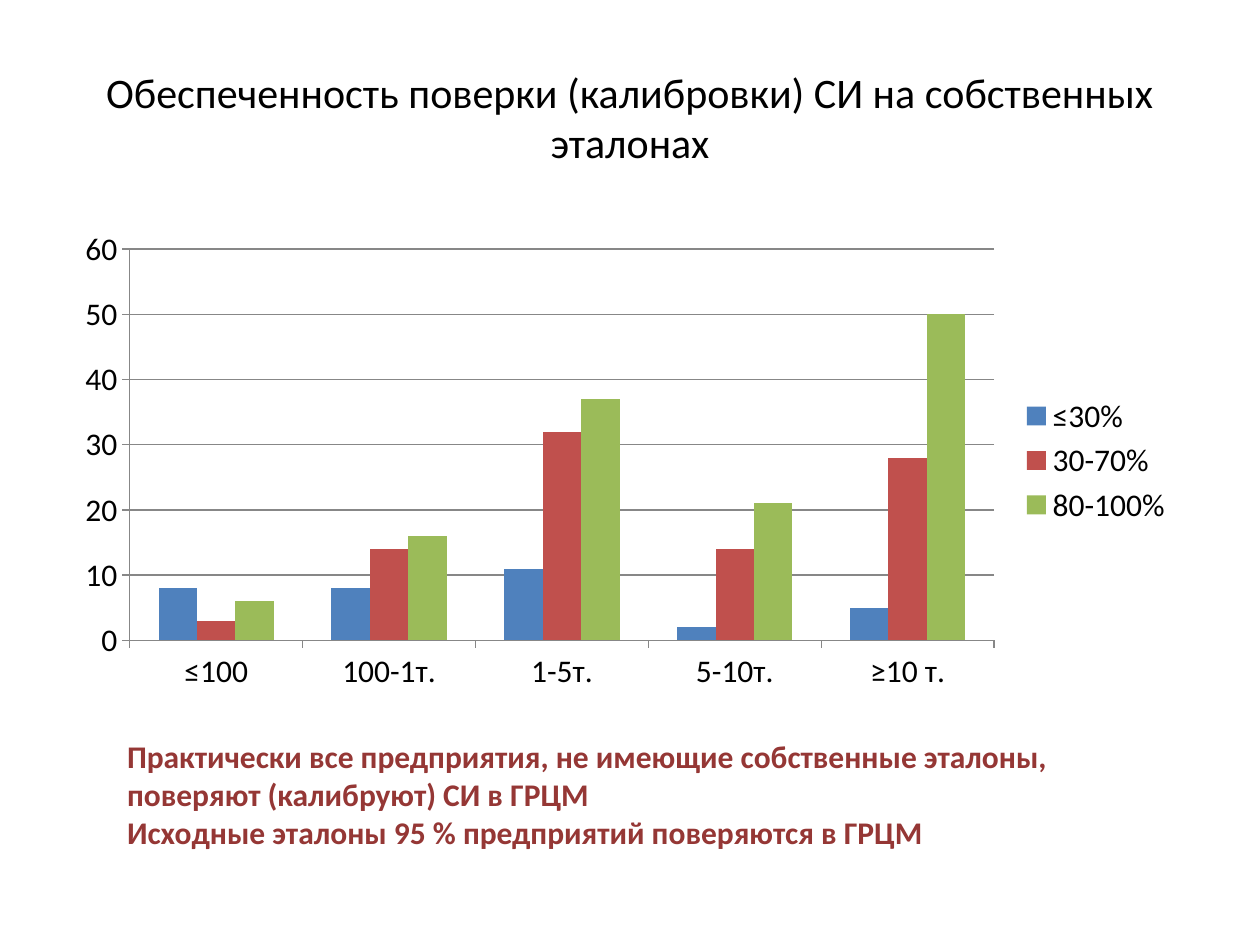
"""Builds a slide on how far enterprises verify instruments with their own standards."""
from dataclasses import dataclass

import pptx
import pptx.chart.data
import pptx.dml.color
import pptx.enum.chart
import pptx.enum.text
import pptx.util

Pt = pptx.util.Pt


@dataclass(frozen=True)
class Theme:
    font: str = "Calibri"
    title_size: int = 24
    body_size: int = 18
    text: str = "000000"
    accent: str = "953735"
    axis: str = "878787"
    series: tuple = ("4F81BD", "C0504D", "9BBB59")


def rgb(value):
    return pptx.dml.color.RGBColor.from_string(value)


def format_font(font, *, name, size, color, bold=False):
    font.name = name
    font.size = Pt(size)
    font.bold = bold
    font.color.rgb = rgb(color)


def write_text(frame, text, *, align, anchor, **font_format):
    frame.word_wrap = True
    frame.vertical_anchor = anchor
    frame.text = text
    for paragraph in frame.paragraphs:
        paragraph.alignment = align
        for run in paragraph.runs:
            format_font(run.font, **font_format)


class SlideBuilder:
    def __init__(self, slide, theme):
        self.slide = slide
        self.theme = theme

    def title(self, text, left, top, width, height):
        shape = self.slide.shapes.title
        shape.left, shape.top = Pt(left), Pt(top)
        shape.width, shape.height = Pt(width), Pt(height)
        write_text(shape.text_frame, text,
                   align=pptx.enum.text.PP_ALIGN.CENTER,
                   anchor=pptx.enum.text.MSO_ANCHOR.MIDDLE,
                   name=self.theme.font, size=self.theme.title_size,
                   color=self.theme.text)

    def note(self, text, left, top, width, height):
        shape = self.slide.shapes.add_textbox(Pt(left), Pt(top), Pt(width), Pt(height))
        write_text(shape.text_frame, text,
                   align=pptx.enum.text.PP_ALIGN.LEFT,
                   anchor=pptx.enum.text.MSO_ANCHOR.TOP,
                   name=self.theme.font, size=self.theme.body_size,
                   color=self.theme.accent, bold=True)
        shape.text_frame.auto_size = pptx.enum.text.MSO_AUTO_SIZE.SHAPE_TO_FIT_TEXT

    def column_chart(self, categories, series, left, top, width, height):
        data = pptx.chart.data.CategoryChartData(number_format="General")
        data.categories = categories
        for name, values in series.items():
            data.add_series(name, values)
        chart = self.slide.shapes.add_chart(
            pptx.enum.chart.XL_CHART_TYPE.COLUMN_CLUSTERED,
            Pt(left), Pt(top), Pt(width), Pt(height), data).chart
        format_font(chart.font, name=self.theme.font, size=self.theme.body_size,
                    color=self.theme.text)
        chart.has_title = False
        chart.has_legend = True
        chart.legend.position = pptx.enum.chart.XL_LEGEND_POSITION.RIGHT
        chart.legend.include_in_layout = False

        plot = chart.plots[0]
        plot.gap_width = 150
        plot.overlap = 0
        plot.vary_by_categories = False
        for column, color in zip(plot.series, self.theme.series):
            column.format.fill.solid()
            column.format.fill.fore_color.rgb = rgb(color)

        for axis in (chart.category_axis, chart.value_axis):
            axis.major_tick_mark = pptx.enum.chart.XL_TICK_MARK.OUTSIDE
            axis.minor_tick_mark = pptx.enum.chart.XL_TICK_MARK.NONE
            self.thin_line(axis.format.line)
        chart.value_axis.has_major_gridlines = True
        self.thin_line(chart.value_axis.major_gridlines.format.line)

    def thin_line(self, line):
        line.color.rgb = rgb(self.theme.axis)
        line.width = Pt(0.75)


def main():
    presentation = pptx.Presentation()
    presentation.slide_width, presentation.slide_height = Pt(720), Pt(540)
    slide = presentation.slides.add_slide(
        presentation.slide_layouts.get_by_name("Title Only"))
    builder = SlideBuilder(slide, Theme())

    builder.title("Обеспеченность поверки (калибровки) СИ на собственных эталонах",
                  36, 21.6, 648, 90)
    builder.column_chart(
        ["≤100", "100-1т.", "1-5т.", "5-10т.", "≥10 т."],
        {"≤30%": (8, 8, 11, 2, 5),
         "30-70%": (3, 14, 32, 14, 28),
         "80-100%": (6, 16, 37, 21, 50)},
        36, 126, 641.5, 274.3)
    builder.note(
        "Практически все предприятия, не имеющие собственные эталоны, "
        "поверяют (калибруют) СИ в ГРЦМ\n"
        "Исходные эталоны 95 % предприятий поверяются в ГРЦМ",
        65.5, 417.6, 601.2, 72.7)
    presentation.save("out.pptx")


if __name__ == "__main__":
    main()
